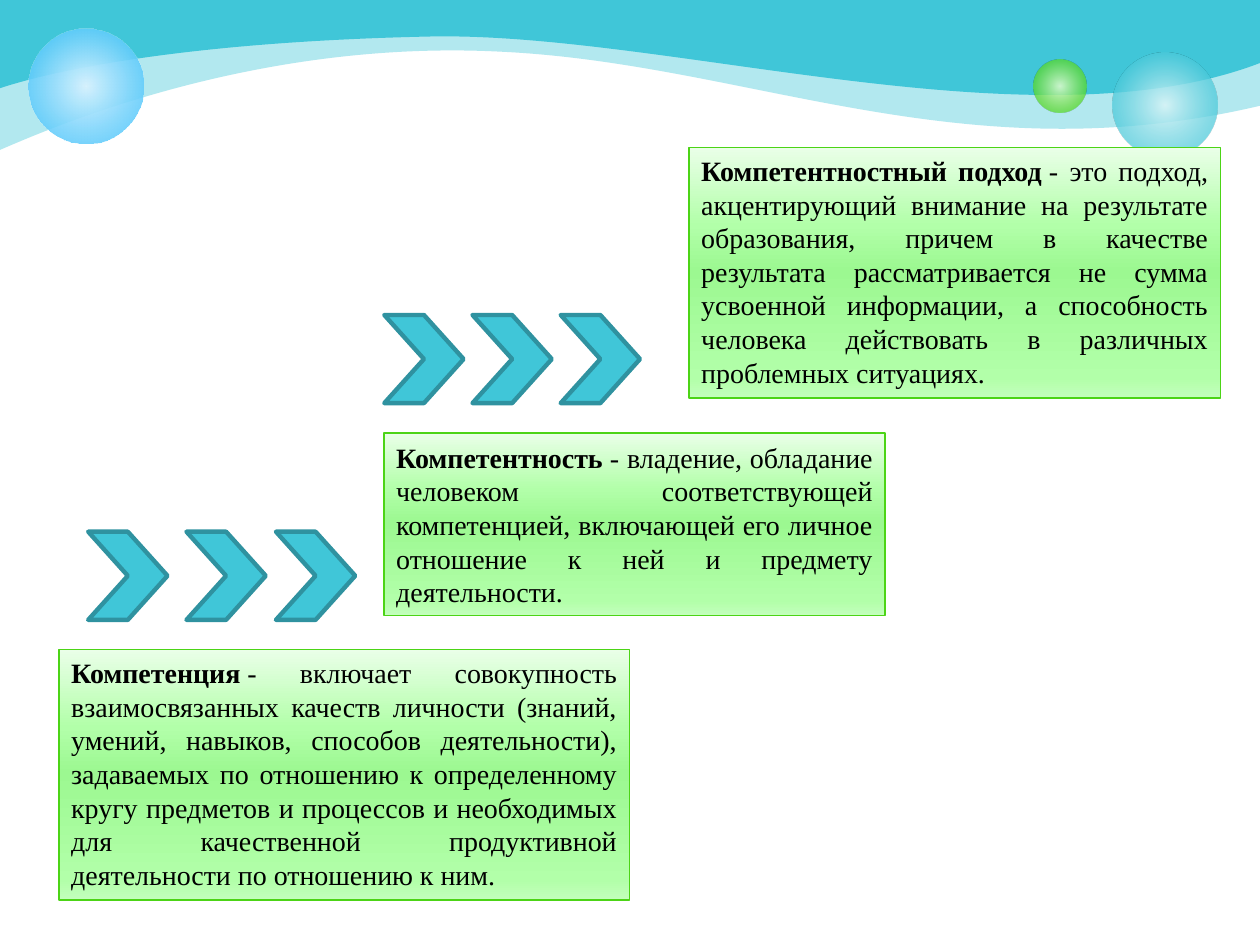
from lxml import etree
from pptx import Presentation
from pptx.dml.color import RGBColor
from pptx.enum.shapes import MSO_SHAPE
from pptx.enum.text import MSO_ANCHOR, MSO_AUTO_SIZE, PP_ALIGN
from pptx.oxml.ns import qn
from pptx.util import Inches, Pt

OVAL, RECT, CHEVRON = MSO_SHAPE.OVAL, MSO_SHAPE.RECTANGLE, MSO_SHAPE.CHEVRON
TOP, MIDDLE = MSO_ANCHOR.TOP, MSO_ANCHOR.MIDDLE
GROW, JUSTIFY = MSO_AUTO_SIZE.SHAPE_TO_FIT_TEXT, PP_ALIGN.JUSTIFY

COLORS = {
    "teal": "40C6D8", "teal_edge": "2F92A0", "teal_light": "D9F4F7",
    "green": "4CD416", "green_light": "DAFACD",
    "blue": "33BDFB", "blue_light": "D6F2FE", "text": "000000",
}
BOX_STOPS = [(0, "EAFFE8", 100), (31, "B2FFA9", 100), (49, "9CF891", 100),
             (92, "B2FFA9", 100), (100, "C3FFBC", 100)]
CELL = Inches(0.1)  # the slide is a grid of 100 columns by 75 rows
NO_BREAK_SPACE = chr(160)


def add_wave(curve_points, opacity):
    """Every three points after the top left corner make one Bezier curve."""
    builder = slide.shapes.build_freeform(0, 0)
    builder.add_line_segments(
        [(round(x * CELL), round(y * CELL)) for x, y in curve_points], close=False)
    builder.add_line_segments([(0, 0)], close=True)
    wave = builder.convert_to_shape()
    segments = list(wave._element.spPr.iter(qn("a:lnTo")))
    for i in range(0, len(curve_points), 3):
        curve = etree.Element(qn("a:cubicBezTo"))
        segments[i].addprevious(curve)
        for segment in segments[i:i + 3]:
            curve.append(segment[0])
            segment.getparent().remove(segment)
    wave.shadow.inherit = False
    wave.line.fill.background()
    wave.fill.solid()
    wave.fill.fore_color.rgb = RGBColor.from_string(COLORS["teal"])
    if opacity < 100:
        color = wave._element.spPr.find(".//" + qn("a:srgbClr"))
        etree.SubElement(color, qn("a:alpha"), val=str(opacity * 1000))


def add_gradient_shape(kind, box, stops, radial):
    """Stops are (position %, colour, opacity %); linear ones run downwards."""
    shape = slide.shapes.add_shape(kind, *(round(v * CELL) for v in box))
    shape.shadow.inherit = False
    shape.fill.gradient()
    gradient = shape._element.spPr.find(qn("a:gradFill"))
    for child in list(gradient):
        gradient.remove(child)
    stop_list = etree.SubElement(gradient, qn("a:gsLst"))
    for position, color, opacity in stops:
        stop = etree.SubElement(stop_list, qn("a:gs"), pos=str(position * 1000))
        rgb = etree.SubElement(stop, qn("a:srgbClr"), val=color)
        if opacity < 100:
            etree.SubElement(rgb, qn("a:alpha"), val=str(opacity * 1000))
    if radial:
        direction = etree.SubElement(gradient, qn("a:path"), path="circle")
        etree.SubElement(direction, qn("a:fillToRect"),
                         l="50000", t="50000", r="50000", b="50000")
    else:
        etree.SubElement(gradient, qn("a:lin"), ang="5400000", scaled="0")
    return shape


prs = Presentation()
prs.slide_width, prs.slide_height = 100 * CELL, 75 * CELL
slide = prs.slides.add_slide(prs.slide_layouts[6])

# Waves along the top edge
add_wave([(0, 4.7), (0, 7.3), (0, 11.9),
          (3.3, 10.5), (19.7, 3.1), (39.6, 4.1),
          (59.5, 5), (76.2, 14), (100, 8.4),
          (100, 5.6), (100, 2.8), (100.1, 0)], 40)
add_wave([(0, 2.8), (0, 4.1), (0, 7),
          (4.5, 5.5), (15.3, 3.3), (34.1, 2.9),
          (52.9, 2.5), (82, 11.9), (100, 5),
          (100, 3.3), (100, 1.7), (100, 0)], 100)

# Bubbles: left, top, diameter, gradient
bubbles = [
    (88.3, 4.2, 8.3, [(0, COLORS["teal_light"], 90), (76, COLORS["teal"], 70)]),
    (82, 4.7, 4.2, [(0, COLORS["green_light"], 90), (76, COLORS["green"], 70)]),
    (2.3, 2.3, 9.1, [(0, COLORS["blue_light"], 100), (100, COLORS["blue"], 80)]),
]
for left, top, size, stops in bubbles:
    bubble = add_gradient_shape(OVAL, (left, top, size, size), stops, radial=True)
    bubble.line.fill.background()

# Definitions, climbing from lower left to upper right
definitions = [
    ((4.67, 51.55, 45.3, 19.9), TOP, "Компетенция",
     "- включает совокупность взаимосвязанных качеств личности (знаний, умений, "
     "навыков, способов деятельности), задаваемых по отношению к определенному "
     "кругу предметов и процессов и необходимых для качественной продуктивной "
     "деятельности по отношению к ним."),
    ((30.46, 34.36, 39.8, 14.5), MIDDLE, "Компетентность",
     "- владение, обладание человеком соответствующей компетенцией, включающей "
     "его личное отношение к ней и предмету деятельности."),
    ((54.67, 11.7, 42.2, 19.9), TOP, "Компетентностный подход",
     "- это подход, акцентирующий внимание на результате образования, причем в "
     "качестве результата рассматривается не сумма усвоенной информации, а "
     "способность человека действовать в различных проблемных ситуациях."),
]
for box, anchor, term, meaning in definitions:
    card = add_gradient_shape(RECT, box, BOX_STOPS, radial=False)
    card.line.color.rgb = RGBColor.from_string(COLORS["green"])
    card.line.width = Pt(0.9)

    frame = card.text_frame
    frame.word_wrap = True
    frame.auto_size = GROW
    frame.vertical_anchor = anchor
    paragraph = frame.paragraphs[0]
    paragraph.alignment = JUSTIFY
    for words, bold in ((term + NO_BREAK_SPACE, True), (meaning, False)):
        run = paragraph.add_run()
        run.text = words
        run.font.name = "Times New Roman"
        run.font.size = Pt(16)
        run.font.bold = bold
        run.font.color.rgb = RGBColor.from_string(COLORS["text"])

# Chevrons leading from one definition to the next
for top, lefts in ((42.2, (7, 14.8, 21.9)), (25, (30.5, 37.5, 44.5))):
    for left in lefts:
        chevron = slide.shapes.add_shape(
            CHEVRON, *(round(v * CELL) for v in (left, top, 6.3, 7)))
        chevron.shadow.inherit = False
        chevron.fill.solid()
        chevron.fill.fore_color.rgb = RGBColor.from_string(COLORS["teal"])
        chevron.line.color.rgb = RGBColor.from_string(COLORS["teal_edge"])
        chevron.line.width = Pt(2.5)

prs.save("out.pptx")
